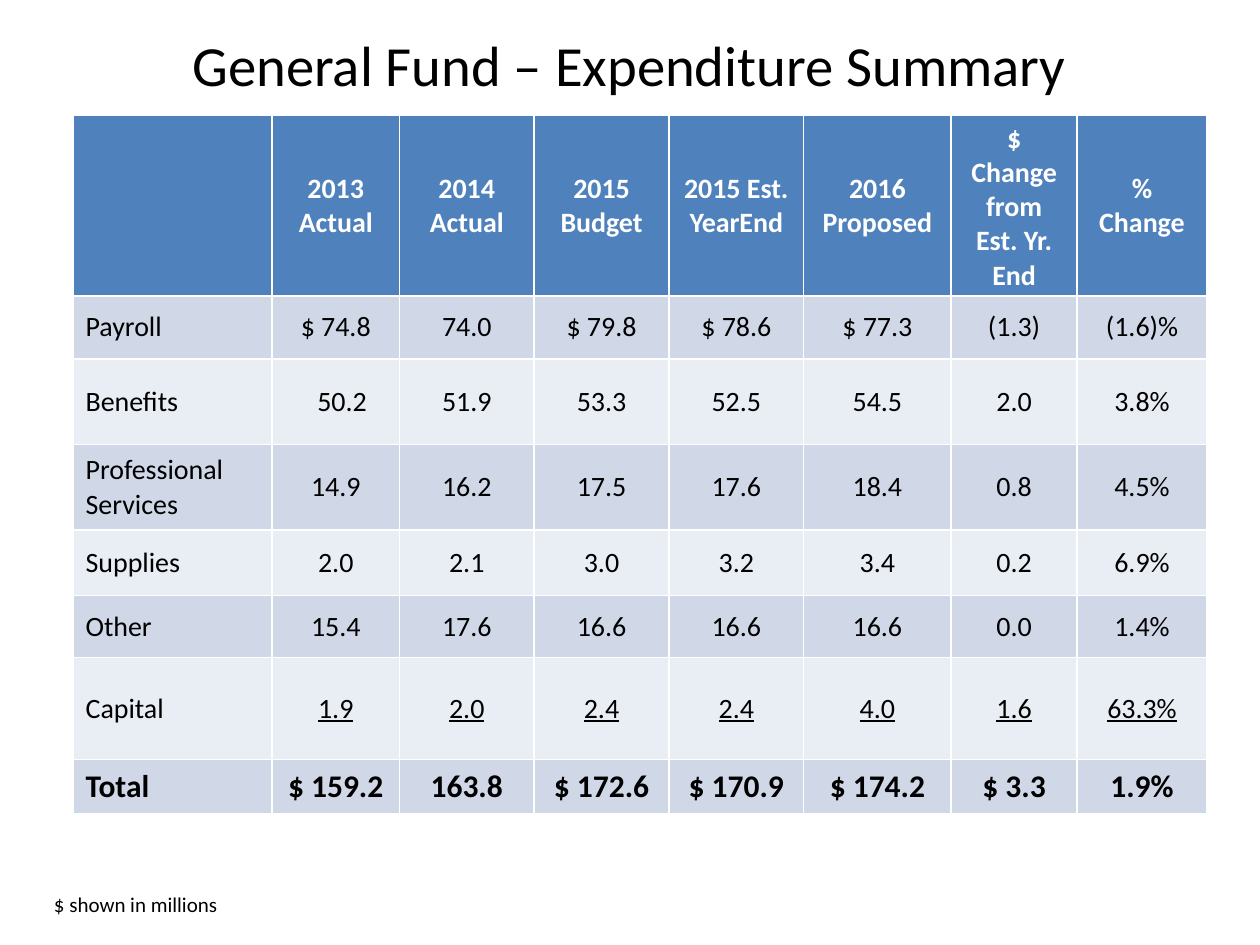
"""Build the General Fund expenditure summary slide."""
from dataclasses import dataclass

from pptx import Presentation
from pptx import util as u
from pptx.dml.color import RGBColor
from pptx.enum import text


@dataclass(frozen=True)
class Theme:
    font: str = "Calibri"
    ink: str = "000000"
    header_ink: str = "FFFFFF"
    header_fill: str = "4F81BD"
    bands: tuple[str, str] = ("D0D8E8", "E9EDF4")
    title_size: float = 32.4
    body_size: float = 16
    total_size: float = 18
    note_size: float = 12


@dataclass(frozen=True)
class Style:
    size: float
    color: str
    bold: bool = False
    underline: bool = False


@dataclass(frozen=True)
class Box:
    left: float
    top: float
    width: float
    height: float

    def lengths(self) -> tuple[int, ...]:
        shares = (self.left, self.top, self.width, self.height)
        return tuple(u.Inches(share * side) for share, side in zip(shares, SLIDE_SIZE * 2))


@dataclass(frozen=True)
class Row:
    height: float
    label: str
    values: tuple[str, ...]


THEME = Theme()
SLIDE_SIZE = (10, 7.5)
TITLE_BOX = Box(0.083, 0.023, 0.833, 0.089)
TABLE_BOX = Box(0.058, 0.122, 0.9, 0.64)
NOTE_BOX = Box(0.033, 0.937, 0.258, 0.04)
COLUMN_WIDTHS = (1.58, 1.01, 1.07, 1.07, 1.07, 1.17, 1, 1.03)
ROWS = (
    Row(0.68, "", ("2013 Actual", "2014 Actual", "2015 Budget", "2015 Est. YearEnd",
                   "2016 Proposed", "$ Change from Est. Yr. End", "% Change")),
    Row(0.5, "Payroll", ("$ 74.8", "74.0", "$ 79.8", "$ 78.6", "$ 77.3", "(1.3)", "(1.6)%")),
    Row(0.68, "Benefits", ("50.2", "51.9", "53.3", "52.5", "54.5", "2.0", "3.8%")),
    Row(0.68, "Professional Services", ("14.9", "16.2", "17.5", "17.6", "18.4", "0.8", "4.5%")),
    Row(0.52, "Supplies", ("2.0", "2.1", "3.0", "3.2", "3.4", "0.2", "6.9%")),
    Row(0.49, "Other", ("15.4", "17.6", "16.6", "16.6", "16.6", "0.0", "1.4%")),
    Row(0.81, "Capital", ("1.9", "2.0", "2.4", "2.4", "4.0", "1.6", "63.3%")),
    Row(0.43, "Total", ("$ 159.2", "163.8", "$ 172.6", "$ 170.9", "$ 174.2", "$ 3.3", "1.9%")),
)


def write(frame, words: str, style: Style, centered: bool) -> None:
    paragraph = frame.paragraphs[0]
    font = paragraph.font
    font.name, font.size = THEME.font, u.Pt(style.size)
    font.bold, font.underline = style.bold, style.underline
    font.color.rgb = RGBColor.from_string(style.color)
    paragraph.alignment = text.PP_ALIGN.CENTER if centered else text.PP_ALIGN.LEFT
    if words:
        paragraph.add_run().text = words


def add_text(slide, box: Box, words: str, size: float, centered: bool = False) -> None:
    frame = slide.shapes.add_textbox(*box.lengths()).text_frame
    frame.word_wrap = True
    frame.vertical_anchor = text.MSO_ANCHOR.MIDDLE if centered else text.MSO_ANCHOR.TOP
    write(frame, words, Style(size, THEME.ink), centered)


def row_style(number: int, row: Row, is_value: bool) -> Style:
    if number == 0:
        return Style(THEME.body_size, THEME.header_ink, bold=True)
    if row.label == "Total":
        return Style(THEME.total_size, THEME.ink, bold=True)
    return Style(THEME.body_size, THEME.ink, underline=is_value and row.label == "Capital")


def add_expenditure_table(slide) -> None:
    table = slide.shapes.add_table(len(ROWS), len(COLUMN_WIDTHS), *TABLE_BOX.lengths()).table
    for column, width in zip(table.columns, COLUMN_WIDTHS):
        column.width = u.Inches(width)
    for number, row in enumerate(ROWS):
        table.rows[number].height = u.Inches(row.height)
        fill = THEME.bands[(number - 1) % 2] if number else THEME.header_fill
        for position, words in enumerate((row.label, *row.values)):
            cell = table.cell(number, position)
            cell.fill.solid()
            cell.fill.fore_color.rgb = RGBColor.from_string(fill)
            cell.vertical_anchor = text.MSO_ANCHOR.MIDDLE
            is_value = position > 0
            write(cell.text_frame, words, row_style(number, row, is_value), is_value)
            if row.label == "Benefits" and position == 1:
                cell.margin_left = u.Inches(0.2)


def main() -> None:
    presentation = Presentation()
    presentation.slide_width, presentation.slide_height = map(u.Inches, SLIDE_SIZE)
    slide = presentation.slides.add_slide(presentation.slide_layouts[6])
    add_text(slide, TITLE_BOX, "General Fund – Expenditure Summary", THEME.title_size, centered=True)
    add_expenditure_table(slide)
    add_text(slide, NOTE_BOX, "$ shown in millions", THEME.note_size)
    presentation.save("out.pptx")


if __name__ == "__main__":
    main()
